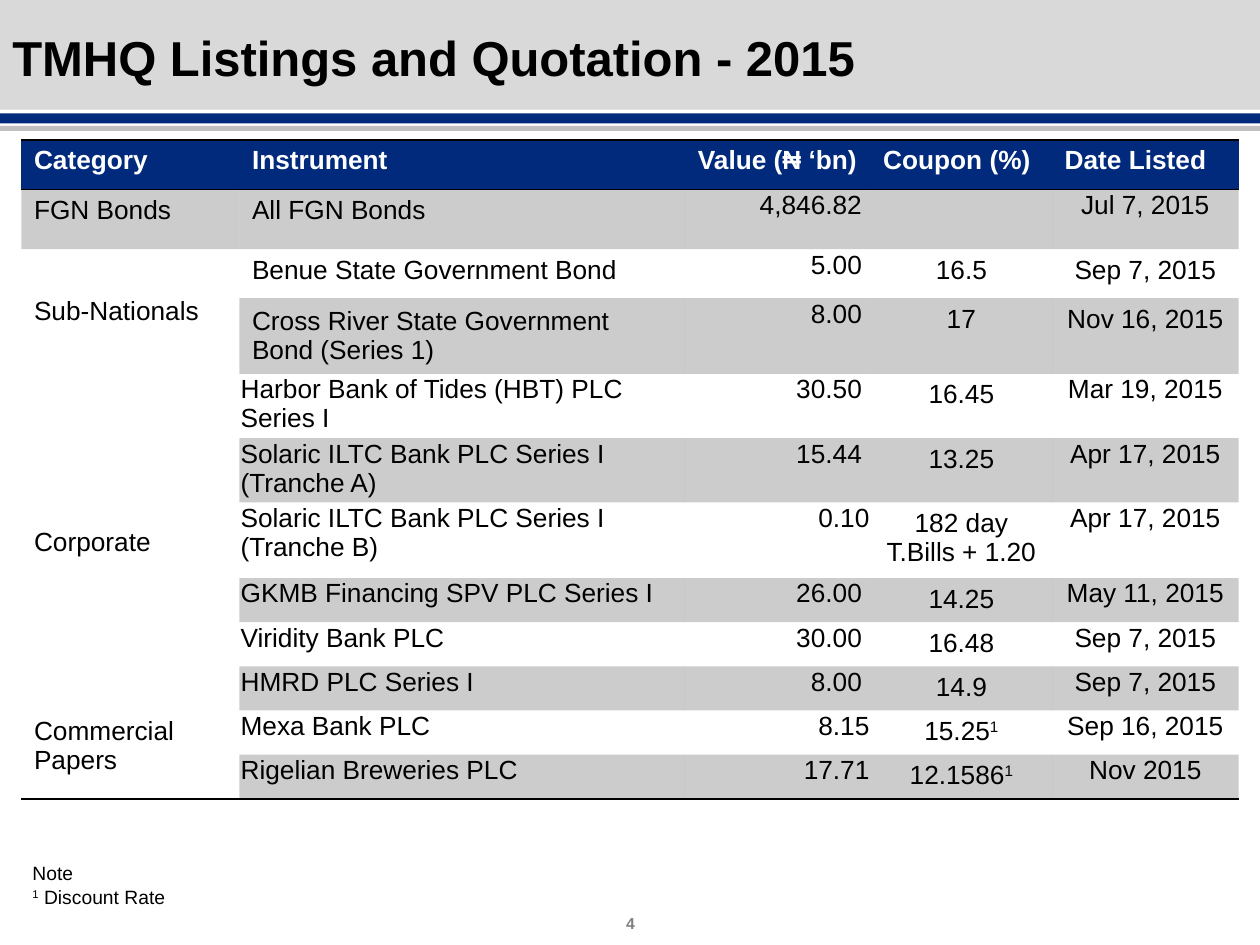
from dataclasses import dataclass

from lxml.etree import SubElement
from pptx import Presentation
from pptx.dml.color import RGBColor
from pptx.enum.shapes import MSO_SHAPE
from pptx.enum.text import MSO_ANCHOR, PP_ALIGN
from pptx.oxml.ns import qn
from pptx.util import Inches, Pt


@dataclass(frozen=True)
class Theme:
    font: str = "Arial"
    black: str = "000000"
    white: str = "FFFFFF"
    navy: str = "012A7C"
    band: str = "D9D9D9"
    rule: str = "BFBFBF"
    muted: str = "7F7F7F"
    title_size: int = 28
    table_size: int = 15
    note_size: int = 11
    number_size: int = 9
    shade_alpha: int = 20
    plain_table: str = "{2D5ABB26-0587-4C30-8999-92F81FD0307C}"


LEFT, CENTER, RIGHT = PP_ALIGN.LEFT, PP_ALIGN.CENTER, PP_ALIGN.RIGHT
NORMAL = (0.1, 0.05, 0.1, 0.05)
TIGHT = (0.01, 0.01, 0.01, 0)
TIGHT_INDENTED = (0.01, 0.01, 0.07, 0)


class SlideBuilder:
    def __init__(self, slide, theme):
        self.slide = slide
        self.theme = theme

    def bar(self, left, top, width, height, color):
        shape = self.slide.shapes.add_shape(
            MSO_SHAPE.RECTANGLE, Inches(left), Inches(top), Inches(width), Inches(height))
        shape.shadow.inherit = False
        shape.fill.solid()
        shape.fill.fore_color.rgb = RGBColor.from_string(color)
        shape.line.fill.background()

    def paragraph(self, paragraph, runs, size, color, bold=False, align=LEFT):
        """Each run is a string, or a (string, True) pair for superscript."""
        paragraph.alignment = align
        for item in runs:
            text, raised = item if isinstance(item, tuple) else (item, False)
            run = paragraph.add_run()
            run.text = text
            run.font.name = self.theme.font
            run.font.size = Pt(size)
            run.font.bold = bold
            run.font.color.rgb = RGBColor.from_string(color)
            if raised:
                run.font._element.set("baseline", "30000")

    def text(self, left, top, width, height, lines, size, color,
             bold=False, align=LEFT, anchor=MSO_ANCHOR.TOP, spacing=None):
        box = self.slide.shapes.add_textbox(
            Inches(left), Inches(top), Inches(width), Inches(height))
        frame = box.text_frame
        frame.word_wrap = True
        frame.vertical_anchor = anchor
        for index, runs in enumerate(lines):
            paragraph = frame.add_paragraph() if index else frame.paragraphs[0]
            paragraph.line_spacing = spacing
            self.paragraph(paragraph, runs, size, color, bold, align)

    def table(self, left, top, columns, rows):
        frame = self.slide.shapes.add_table(
            len(rows), len(columns), Inches(left), Inches(top),
            Inches(sum(columns)), Inches(sum(rows)))
        table = frame.table
        table.first_row = table.horz_banding = False
        table._tbl.tblPr.find(qn("a:tableStyleId")).text = self.theme.plain_table
        for column, width in zip(table.columns, columns):
            column.width = Inches(width)
        for row, height in zip(table.rows, rows):
            row.height = Inches(height)
        return table

    def cell(self, cell, runs, align=LEFT, margins=NORMAL, anchor=MSO_ANCHOR.TOP,
             color=None, bold=False, fill=None, alpha=None, borders=()):
        (cell.margin_left, cell.margin_top,
         cell.margin_right, cell.margin_bottom) = map(Inches, margins)
        cell.vertical_anchor = anchor
        self.paragraph(cell.text_frame.paragraphs[0], runs, self.theme.table_size,
                       color or self.theme.black, bold, align)
        for side in borders:
            self.border(cell, side)
        if fill is None:
            cell.fill.background()
            return
        cell.fill.solid()
        cell.fill.fore_color.rgb = RGBColor.from_string(fill)
        if alpha:
            color_element = cell._tc.tcPr.find(qn("a:solidFill"))[0]
            SubElement(color_element, qn("a:alpha"), val=str(alpha * 1000))

    def border(self, cell, side):
        line = SubElement(cell._tc.get_or_add_tcPr(), qn(f"a:ln{side}"), w=str(Pt(1)))
        fill = SubElement(line, qn("a:solidFill"))
        SubElement(fill, qn("a:srgbClr"), val=self.theme.black)


HEADERS = [("Category", LEFT), ("Instrument", LEFT), ("Value (₦ ‘bn)", CENTER),
           ("Coupon (%)", LEFT), ("Date Listed", LEFT)]
COLUMNS = [1.73, 3.53, 1.48, 1.44, 1.48]
# Row heights in points, turned into inches
ROWS = [points / 72 for points in [28.5, 34, 28, 40.8, 34.3, 34.3, 40.8] + [24] * 5]

# Category, first row, last row, anchor
CATEGORIES = [
    ("FGN Bonds", 1, 1, MSO_ANCHOR.TOP),
    ("Sub-Nationals", 2, 3, MSO_ANCHOR.MIDDLE),
    ("Corporate", 4, 9, MSO_ANCHOR.MIDDLE),
    ("Commercial Papers", 10, 11, MSO_ANCHOR.TOP),
]

# Instrument, value, coupon runs, date
LISTINGS = [
    ("All FGN Bonds", "4,846.82", [], "Jul 7, 2015"),
    ("Benue State Government Bond", "5.00", ["16.5"], "Sep 7, 2015"),
    ("Cross River State Government Bond (Series 1)", "8.00", ["17"], "Nov 16, 2015"),
    ("Harbor Bank of Tides (HBT) PLC Series I", "30.50", ["16.45"], "Mar 19, 2015"),
    ("Solaric ILTC Bank PLC Series I (Tranche A)", "15.44", ["13.25"], "Apr 17, 2015"),
    ("Solaric ILTC Bank PLC Series I (Tranche B)", "0.10",
     ["182 day T.Bills + 1.20"], "Apr 17, 2015"),
    ("GKMB Financing SPV PLC Series I", "26.00", ["14.25"], "May 11, 2015"),
    ("Viridity Bank PLC", "30.00", ["16.48"], "Sep 7, 2015"),
    ("HMRD PLC Series I", "8.00", ["14.9"], "Sep 7, 2015"),
    ("Mexa Bank PLC", "8.15", ["15.25", ("1", True)], "Sep 16, 2015"),
    ("Rigelian Breweries PLC", "17.71", ["12.1586", ("1", True)], "Nov 2015"),
]
FLUSH_VALUES = {"0.10", "8.15", "17.71"}


def add_listings(builder):
    theme = builder.theme
    table = builder.table(0.17, 1.11, COLUMNS, ROWS)
    last = len(LISTINGS)
    shade = {"fill": theme.black, "alpha": theme.shade_alpha}

    # Header row
    for column, (label, align) in enumerate(HEADERS):
        builder.cell(table.cell(0, column), [label], align, color=theme.white,
                     bold=True, fill=theme.navy, borders="TB")

    # Instruments, shaded on every odd row
    for row, (instrument, value, coupon, date) in enumerate(LISTINGS, start=1):
        style = dict(shade) if row % 2 else {}
        style["borders"] = "B" if row == last else ""
        name_margins = NORMAL if row <= 3 else TIGHT
        value_margins = TIGHT if value in FLUSH_VALUES else TIGHT_INDENTED
        date_margins = NORMAL if row in (2, 3) else TIGHT
        anchor = MSO_ANCHOR.MIDDLE if row == 3 else MSO_ANCHOR.TOP
        builder.cell(table.cell(row, 1), [instrument], LEFT, name_margins, anchor, **style)
        builder.cell(table.cell(row, 2), [value], RIGHT, value_margins, **style)
        builder.cell(table.cell(row, 3), coupon, CENTER, **style)
        builder.cell(table.cell(row, 4), [date], CENTER, date_margins, **style)

    # Category column
    for name, first, final, anchor in CATEGORIES:
        borders = "B" if final == last else ""
        style = shade if first == 1 else {}
        if final > first:
            table.cell(first, 0).merge(table.cell(final, 0))
        builder.cell(table.cell(first, 0), [name], anchor=anchor, borders=borders, **style)
        if borders:
            builder.border(table.cell(final, 0), borders)


def main():
    presentation = Presentation()
    presentation.slide_width, presentation.slide_height = Inches(10), Inches(7.5)
    theme = Theme()
    builder = SlideBuilder(presentation.slides.add_slide(presentation.slide_layouts[6]), theme)

    # Title band and rules
    builder.bar(0, 0, 10, 0.87, theme.band)
    builder.bar(0, 1, 10.02, 0.04, theme.rule)
    builder.bar(0, 0.9, 10.02, 0.08, theme.navy)
    builder.text(0, 0, 9.93, 0.97, [["TMHQ Listings and Quotation - 2015"]],
                 theme.title_size, theme.black, bold=True,
                 anchor=MSO_ANCHOR.MIDDLE, spacing=0.9)

    add_listings(builder)

    # Note and slide number
    builder.text(0.16, 6.79, 4.04, 0.47, [["Note"], [("1", True), " Discount Rate"]],
                 theme.note_size, theme.black)
    builder.text(3.88, 7.17, 2.25, 0.32, [["4"]], theme.number_size, theme.muted,
                 bold=True, align=CENTER, anchor=MSO_ANCHOR.MIDDLE)
    presentation.save("out.pptx")


if __name__ == "__main__":
    main()
